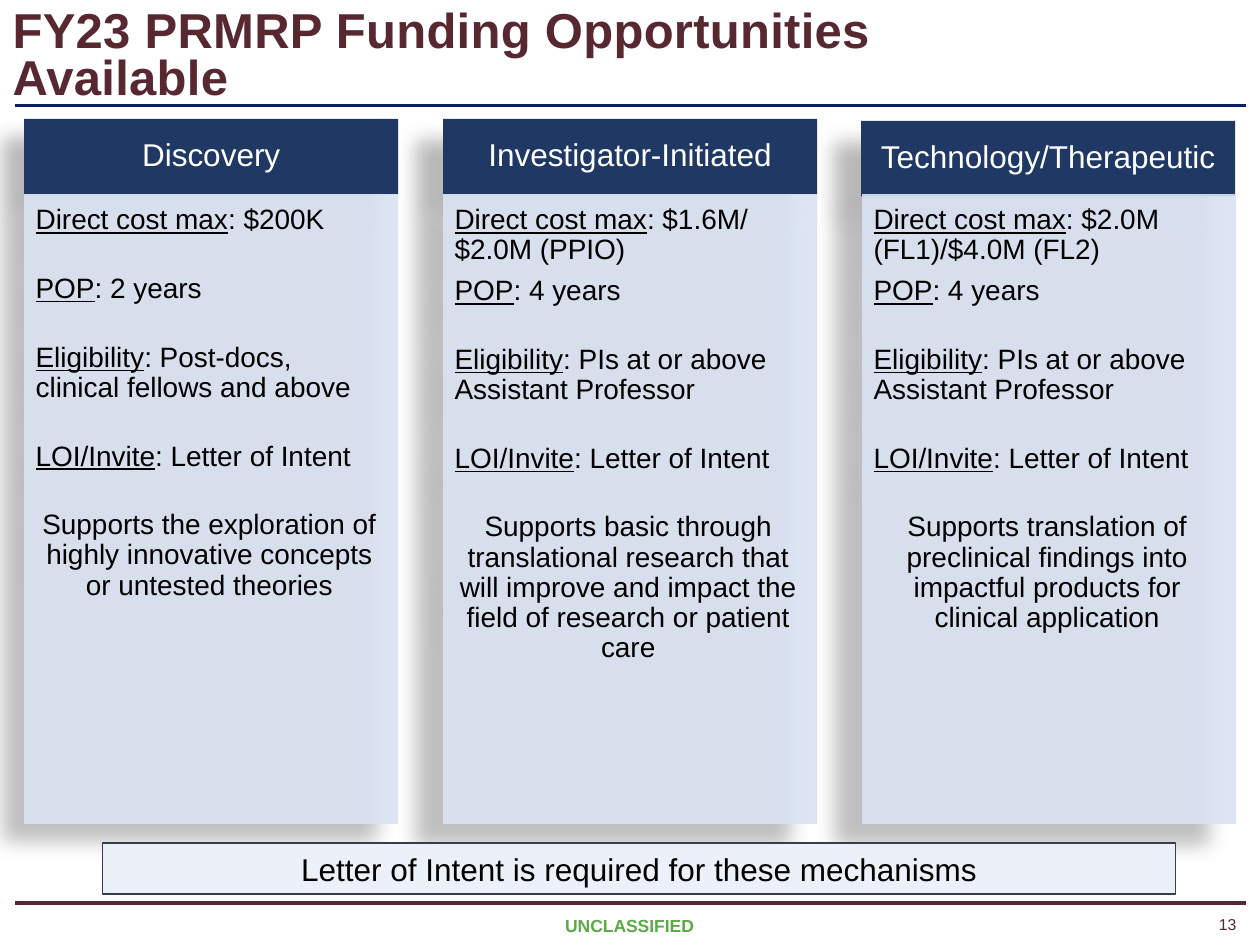
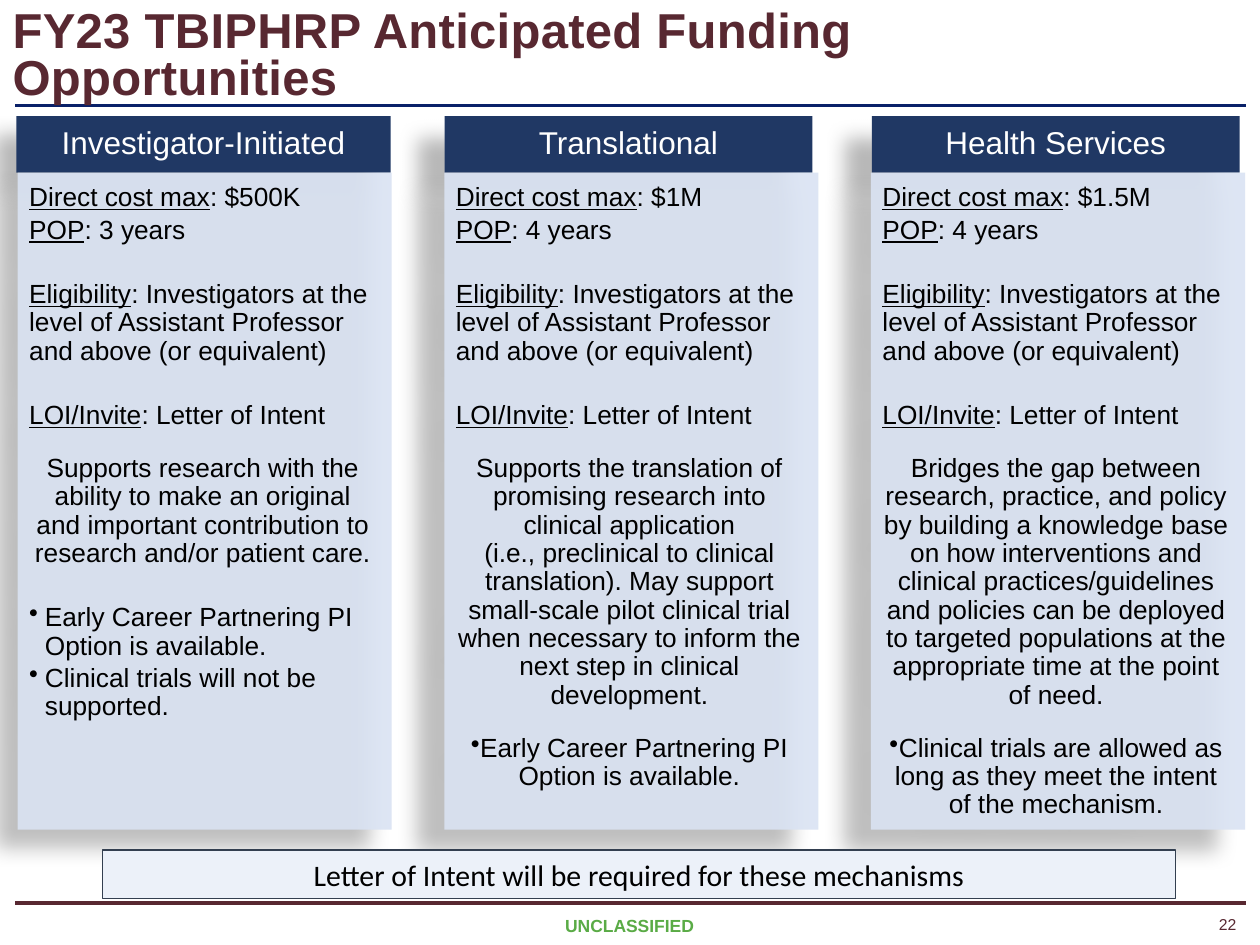
from lxml import etree
from pptx import Presentation
from pptx.dml.color import RGBColor
from pptx.enum.shapes import MSO_CONNECTOR, MSO_SHAPE
from pptx.enum.text import MSO_ANCHOR as Anchor, PP_ALIGN as Align
from pptx.oxml.ns import qn
from pptx.util import Pt

MAROON = RGBColor(0x58, 0x28, 0x31)
RULE_BLUE = RGBColor(0x09, 0x20, 0x68)
GREEN = RGBColor(0x5A, 0xAB, 0x46)
HEAD_BLUE = RGBColor(0x20, 0x38, 0x64)
BODY_BLUE = RGBColor(0xDA, 0xE3, 0xF3)
NOTICE_FILL = RGBColor(0xEC, 0xF1, 0xF9)
NOTICE_LINE = RGBColor(0x33, 0x3F, 0x50)
BLACK = RGBColor(0, 0, 0)
WHITE = RGBColor(255, 255, 255)

# Space after a paragraph, in points
TIGHT, SNUG, MEDIUM, WIDE, WIDER = 2.3, 6, 14, 20.5, 22

# Content: a paragraph is (kind, text, space after);
# a fact's text is split at its first colon into label and value.
# A card's head is (left, top, width).
PI_LEVEL = "Eligibility: PIs at or above Assistant Professor"
INVESTIGATORS = ("Eligibility: Investigators at the level of Assistant Professor "
                 "and above (or equivalent)")
LOI = "LOI/Invite: Letter of Intent"
EARLY_CAREER = "Early Career Partnering PI Option is available."


def senior_facts(cost):
    return [("fact", f"Direct cost max: {cost}", SNUG),
            ("fact", "POP: 4 years", WIDER),
            ("fact", PI_LEVEL, WIDER),
            ("fact", LOI, WIDER)]


def anticipated_facts(cost, years):
    return [("fact", f"Direct cost max: {cost}", TIGHT),
            ("fact", f"POP: {years} years", WIDE),
            ("fact", INVESTIGATORS, WIDE),
            ("fact", LOI, MEDIUM)]


SLIDES = [
    {
        "title": "FY23 PRMRP Funding Opportunities Available",
        "page": "13",
        "head_height": 43.2,
        "body": {"left": 13.8, "step": 239.4, "top": 110.9, "height": 360, "size": 16},
        "notice": ("Letter of Intent is required for these mechanisms",
                   481.7, 29.1, "Arial", 18),
        "cards": [
            {"name": "Discovery", "head": (13.8, 67.9, 213.8), "paragraphs": [
                ("fact", "Direct cost max: $200K", WIDER),
                ("fact", "POP: 2 years", WIDER),
                ("fact", "Eligibility: Post-docs, clinical fellows and above", WIDER),
                ("fact", LOI, WIDER),
                ("aim", "Supports the exploration of highly innovative concepts "
                        "or untested theories", 0)]},
            {"name": "Investigator-Initiated", "head": (253.2, 67.9, 213.8), "paragraphs": [
                *senior_facts("$1.6M/ $2.0M (PPIO)"),
                ("aim", "Supports basic through translational research that will improve "
                        "and impact the field of research or patient care", 0)]},
            {"name": "Technology/Therapeutic", "head": (492.1, 69.1, 213.8), "paragraphs": [
                *senior_facts("$2.0M (FL1)/$4.0M (FL2)"),
                ("aim", "Supports translation of preclinical findings into impactful "
                        "products for clinical application", 0)]},
        ],
    },
    {
        "title": "FY23 TBIPHRP Anticipated Funding Opportunities",
        "page": "22",
        "head_height": 32.4,
        "body": {"left": 10.1, "step": 243.8, "top": 98.6, "height": 375.5, "size": 15},
        "notice": ("Letter of Intent will be required for these mechanisms",
                   485.7, 27.9, "Calibri", 17),
        "cards": [
            {"name": "Investigator-Initiated", "head": (9.4, 66.3, 213.8), "paragraphs": [
                *anticipated_facts("$500K", 3),
                ("aim", "Supports research with the ability to make an original and "
                        "important contribution to research and/or patient care.", WIDE),
                ("bullet", EARLY_CAREER, TIGHT),
                ("bullet", "Clinical trials will not be supported.", 0)]},
            {"name": "Translational", "head": (254, 66.3, 210.2), "paragraphs": [
                *anticipated_facts("$1M", 4),
                ("aim", "Supports the translation of promising research into clinical "
                        "application\v(i.e., preclinical to clinical translation). May support "
                        "small-scale pilot clinical trial when necessary to inform the next "
                        "step in clinical development.", MEDIUM),
                ("centred bullet", EARLY_CAREER, 0)]},
            {"name": "Health Services", "head": (498.2, 66.3, 210.2), "paragraphs": [
                *anticipated_facts("$1.5M", 4),
                ("aim", "Bridges the gap between research, practice, and policy by building "
                        "a knowledge base on how interventions and clinical "
                        "practices/guidelines and policies can be deployed to targeted "
                        "populations at the appropriate time at the point of need.", MEDIUM),
                ("centred bullet", "Clinical trials are allowed as long as they meet "
                                   "the intent of the mechanism.", 0)]},
        ],
    },
]

BODY_WIDTH = 213.8
RULE_LEFT, RULE_RIGHT = 8.6, 712.1


def style(paragraph, size, color, align=Align.LEFT, font="Arial", bold=False):
    paragraph.alignment = align
    for run in paragraph.runs:
        run.font.name = font
        run.font.size = Pt(size)
        run.font.bold = bold
        run.font.color.rgb = color


def set_insets(frame, left, top, right, bottom):
    frame.margin_left, frame.margin_top = Pt(left), Pt(top)
    frame.margin_right, frame.margin_bottom = Pt(right), Pt(bottom)


def add_panel(slide, left, top, width, height, fill):
    panel = slide.shapes.add_shape(MSO_SHAPE.RECTANGLE, Pt(left), Pt(top), Pt(width), Pt(height))
    panel.shadow.inherit = False
    panel.fill.solid()
    panel.fill.fore_color.rgb = fill
    panel.line.fill.background()
    panel.text_frame.word_wrap = True
    return panel


def set_alpha(color_element, percent):
    etree.SubElement(color_element, qn("a:alpha"), val=str(percent * 1000))


def cast_shadow(panel, distance, angle):
    effects = panel._element.spPr.find(qn("a:effectLst"))
    shadow = etree.SubElement(effects, qn("a:outerShdw"), blurRad=str(Pt(11.8)),
                              dist=str(Pt(distance)), dir=str(angle * 60000),
                              algn="tl", rotWithShape="0")
    set_alpha(etree.SubElement(shadow, qn("a:srgbClr"), val="000000"), 28)


def add_bullet(paragraph, hang):
    properties = paragraph._p.get_or_add_pPr()
    properties.set("marL", str(Pt(hang)))
    properties.set("indent", str(-Pt(hang)))
    etree.SubElement(properties, qn("a:buChar"), char="•")


def add_rule(slide, y, color):
    rule = slide.shapes.add_connector(MSO_CONNECTOR.STRAIGHT,
                                      Pt(RULE_LEFT), Pt(y), Pt(RULE_RIGHT), Pt(y))
    rule.line.color.rgb = color
    rule.line.width = Pt(2.25)
    etree.SubElement(rule._element.spPr, qn("a:effectLst"))


def add_footer(slide, text, left, width, size, color, align, bold=False):
    box = slide.shapes.add_textbox(Pt(left), Pt(519.3), Pt(width), Pt(19))
    box.text_frame.word_wrap = True
    box.text_frame.text = text
    style(box.text_frame.paragraphs[0], size, color, align, bold=bold)


def add_frame(slide, page):
    add_rule(slide, 60.3, RULE_BLUE)
    add_rule(slide, 516.2, MAROON)
    add_footer(slide, "UNCLASSIFIED", 311.7, 96, 10, GREEN, Align.CENTER, bold=True)
    add_footer(slide, page, 676.8, 36.7, 9, MAROON, Align.RIGHT)


def set_title(slide, text):
    title = slide.shapes.title
    title.left, title.top, title.width, title.height = Pt(0), Pt(7.9), Pt(550), Pt(50.4)
    frame = title.text_frame
    frame.text = text
    frame.word_wrap = True
    frame.vertical_anchor = Anchor.MIDDLE
    heading = frame.paragraphs[0]
    heading.line_spacing = 0.8
    style(heading, 28, MAROON, bold=True)
    heading.runs[0].font._element.set("spc", "20")
    slide.shapes._spTree.append(title._element)  # keeps the title above the rule


def add_head(slide, name, left, top, width, height):
    head = add_panel(slide, left, top, width, height, HEAD_BLUE)
    frame = head.text_frame
    set_insets(frame, 10, 5.8, 10, 5.8)
    frame.vertical_anchor = Anchor.MIDDLE
    frame.text = name
    frame.paragraphs[0].line_spacing = 0.9
    style(frame.paragraphs[0], 18, WHITE, Align.CENTER)
    return head


def write_paragraph(paragraph, kind, text, gap, size):
    if "bullet" in kind:
        add_bullet(paragraph, 9 if kind == "bullet" else 0)
    if kind == "fact":
        label, value = text.split(":", 1)
        for part in (label, ":" + value):
            paragraph.add_run().text = part
        paragraph.runs[0].font.underline = True
    else:
        paragraph.text = text
    paragraph.line_spacing = 0.9
    paragraph.space_after = Pt(gap)
    style(paragraph, size, BLACK,
          Align.CENTER if kind in ("aim", "centred bullet") else Align.LEFT)


def add_body(slide, paragraphs, left, top, height, size):
    body = add_panel(slide, left, top, BODY_WIDTH, height, BODY_BLUE)
    set_alpha(body._element.spPr.find(".//" + qn("a:srgbClr")), 90)
    frame = body.text_frame
    set_insets(frame, 6.6, 6.6, 8.8, 9.8)
    frame.vertical_anchor = Anchor.TOP
    for i, (kind, text, gap) in enumerate(paragraphs):
        paragraph = frame.add_paragraph() if i else frame.paragraphs[0]
        write_paragraph(paragraph, kind, text, gap, size)
    return body


def add_notice(slide, text, top, height, font, size):
    notice = add_panel(slide, 58.5, top, 613.4, height, NOTICE_FILL)
    notice.line.color.rgb = NOTICE_LINE
    notice.line.width = Pt(0.75)
    notice.text_frame.vertical_anchor = Anchor.MIDDLE
    notice.text_frame.text = text
    style(notice.text_frame.paragraphs[0], size, BLACK, Align.CENTER, font)


def build_slide(deck, content):
    slide = deck.slides.add_slide(deck.slide_layouts[5])
    add_frame(slide, content["page"])
    # Cards: dark head and pale body
    body = content["body"]
    for column, card in enumerate(content["cards"]):
        head_panel = add_head(slide, card["name"], *card["head"], content["head_height"])
        body_panel = add_body(slide, card["paragraphs"], body["left"] + column * body["step"],
                              body["top"], body["height"], body["size"])
        distance, angle = (19.7, 141) if column else (16, 140)
        for panel in (head_panel, body_panel):
            cast_shadow(panel, distance, angle)
    set_title(slide, content["title"])
    add_notice(slide, *content["notice"])


def main():
    deck = Presentation()
    deck.slide_width, deck.slide_height = Pt(720), Pt(540)
    for content in SLIDES:
        build_slide(deck, content)
    deck.save("out.pptx")


if __name__ == "__main__":
    main()
